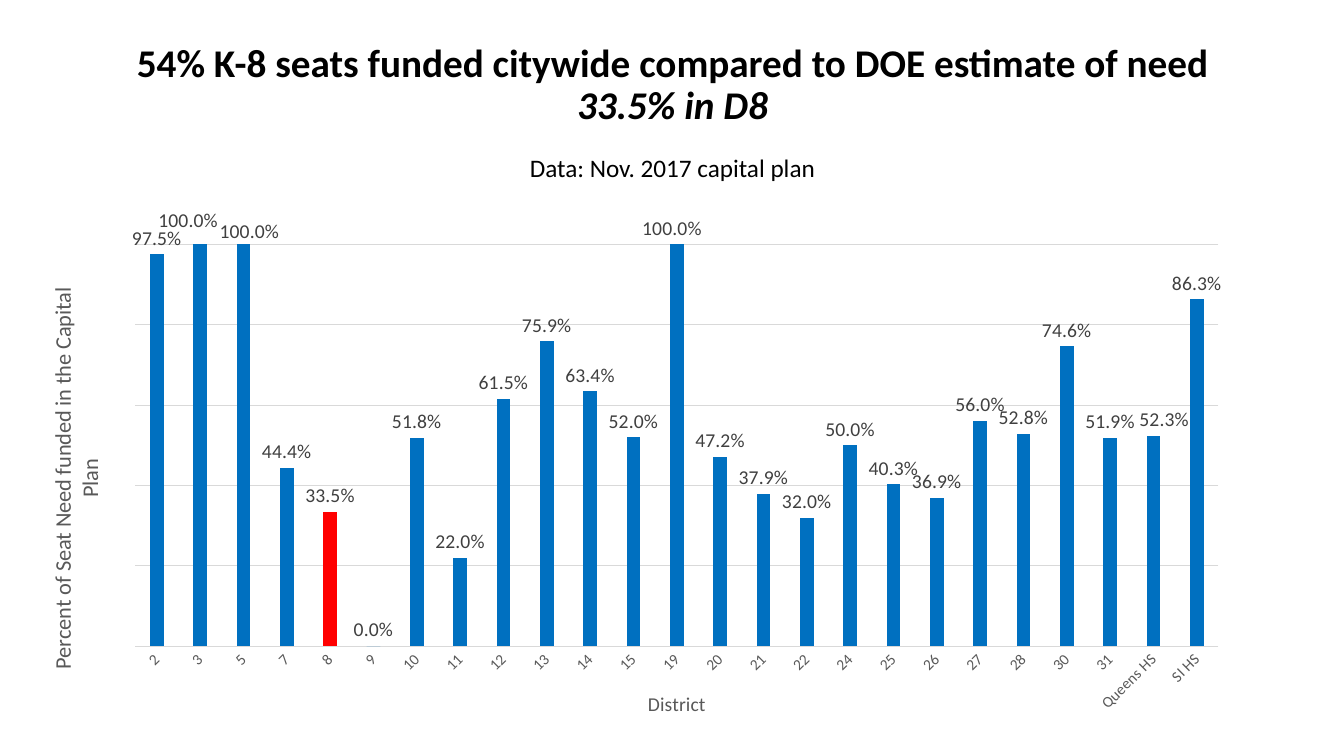
from lxml import etree
from pptx import Presentation
from pptx.chart.data import CategoryChartData
from pptx.dml.color import RGBColor
from pptx.enum.chart import XL_CHART_TYPE, XL_LABEL_POSITION, XL_TICK_MARK
from pptx.enum.text import MSO_ANCHOR, PP_ALIGN
from pptx.oxml.ns import qn
from pptx.util import Inches, Pt

COLUMNS = XL_CHART_TYPE.COLUMN_CLUSTERED
OUTSIDE_END = XL_LABEL_POSITION.OUTSIDE_END
NO_TICK = XL_TICK_MARK.NONE
MIDDLE, CENTER = MSO_ANCHOR.MIDDLE, PP_ALIGN.CENTER

BLACK = RGBColor(0x00, 0x00, 0x00)
WHITE = RGBColor(0xFF, 0xFF, 0xFF)
BLUE = RGBColor(0x00, 0x70, 0xC0)
RED = RGBColor(0xFF, 0x00, 0x00)
GRID_GRAY = RGBColor(0xD9, 0xD9, 0xD9)
AXIS_GRAY = RGBColor(0x59, 0x59, 0x59)
LABEL_GRAY = RGBColor(0x40, 0x40, 0x40)
FONT = "Calibri"
PERCENT = "0.0%"

TITLE_LINES = [
    ("54% K-8 seats funded citywide compared to DOE estimate of need", dict(size=28, bold=True)),
    ("33.5% in D8", dict(size=28, bold=True, italic=True)),
    ("Data: Nov. 2017 capital plan", dict(size=18, before=20)),
]
FUNDED = {
    "2": 0.975, "3": 1, "5": 1, "7": 0.444, "8": 0.335, "9": 0, "10": 0.518,
    "11": 0.22, "12": 0.615, "13": 0.759, "14": 0.634, "15": 0.52, "19": 1,
    "20": 0.472, "21": 0.379, "22": 0.32, "24": 0.5, "25": 0.403, "26": 0.369,
    "27": 0.56, "28": 0.528, "30": 0.746, "31": 0.519, "Queens HS": 0.523,
    "SI HS": 0.863,
}
HIGHLIGHT = "8"
LABEL_SHIFTS = {"3": (-0.01, -0.015), "5": (0.005, 0.006), "19": (-0.004, 0), "Queens HS": (0.009, 0)}
PLOT_AREA = dict(layoutTarget="inner", xMode="edge", yMode="edge", x=0.081, y=0.098, w=0.906, h=0.758)


def style_font(font, size, color, bold=False, italic=False):
    """Apply the slide's typeface with the given format."""
    font.name, font.size = FONT, Pt(size)
    font.bold, font.italic = bold, italic
    font.color.rgb = color


def write_line(para, text, size, color=BLACK, bold=False, italic=False, before=0):
    """Write one centred line into a paragraph."""
    para.alignment = CENTER
    para.line_spacing = 0.9
    para.space_before = Pt(before)
    span = para.add_run()
    span.text = text
    style_font(span.font, size, color, bold, italic)


def make_layout(settings):
    """Return a manual chart layout element."""
    layout = etree.Element(qn("c:layout"))
    manual = etree.SubElement(layout, qn("c:manualLayout"))
    for name, value in settings.items():
        etree.SubElement(manual, qn("c:" + name)).set("val", str(value))
    return layout


def add_title(page):
    """Fill the title placeholder."""
    title = page.shapes.title
    title.left, title.top = Inches(0.92), Inches(0.38)
    title.width, title.height = Inches(11.5), Inches(1.49)
    title.fill.solid()
    title.fill.fore_color.rgb = WHITE
    frame = title.text_frame
    frame.word_wrap = True
    frame.vertical_anchor = MIDDLE
    for index, (text, style) in enumerate(TITLE_LINES):
        para = frame.add_paragraph() if index else frame.paragraphs[0]
        write_line(para, text, **style)


def style_axes(chart):
    """Format both axes and their titles."""
    districts, percents = chart.category_axis, chart.value_axis
    for axis, text, size in (
        (districts, "District", 14),
        (percents, "Percent of Seat Need funded in the Capital Plan", 16),
    ):
        para = axis.axis_title.text_frame.paragraphs[0]
        span = para.add_run()
        span.text = text
        style_font(span.font, size, AXIS_GRAY)
        axis.major_tick_mark = axis.minor_tick_mark = NO_TICK
    percents.axis_title.text_frame._txBody.bodyPr.set("rot", "-5400000")
    percents.minimum_scale, percents.maximum_scale = 0, 1
    percents.major_unit = 0.2
    percents.visible = False
    percents.tick_labels.number_format = PERCENT
    percents.tick_labels.number_format_is_linked = False
    style_font(districts.tick_labels.font, 11, AXIS_GRAY)
    districts._element.find(qn("c:txPr")).find(qn("a:bodyPr")).set("rot", "-2700000")
    for line in (percents.major_gridlines.format.line, districts.format.line):
        line.color.rgb = GRID_GRAY
        line.width = Pt(0.75)


def style_columns(plot):
    """Colour the columns and place their labels."""
    plot.gap_width, plot.overlap = 219, -27
    plot.vary_by_categories = False
    series = plot.series[0]
    series.invert_if_negative = False
    series.format.fill.solid()
    series.format.fill.fore_color.rgb = BLUE
    names = list(FUNDED)
    fill = series.points[names.index(HIGHLIGHT)].format.fill
    fill.solid()
    fill.fore_color.rgb = RED
    labels = series.data_labels
    labels.show_value = True
    labels.position = OUTSIDE_END
    labels.number_format = PERCENT
    labels.number_format_is_linked = False
    style_font(labels.font, 14, LABEL_GRAY)
    for name, (shift_x, shift_y) in LABEL_SHIFTS.items():
        index = names.index(name)
        label = series.points[index].data_label
        label.position = OUTSIDE_END
        style_font(label.font, 14, LABEL_GRAY)
        element = series._element.xpath(f"c:dLbls/c:dLbl[c:idx/@val='{index}']")[0]
        element.insert(1, make_layout(dict(x=shift_x, y=shift_y)))


def add_funding_chart(page):
    """Add the chart of funded seats by district."""
    data = CategoryChartData(number_format=PERCENT)
    data.categories = list(FUNDED)
    data.add_series("Series 1", list(FUNDED.values()))
    frame = page.shapes.add_chart(COLUMNS, Inches(0.38), Inches(1.91), Inches(11.86), Inches(5.26), data)
    chart = frame.chart
    chart.has_legend = chart.has_title = False
    style_font(chart.font, 10, BLACK)
    style_axes(chart)
    style_columns(chart.plots[0])
    area = chart._chartSpace.chart.plotArea
    for old in area.findall(qn("c:layout")):
        area.remove(old)
    area.insert(0, make_layout(PLOT_AREA))


def main():
    """Build and save the slide."""
    deck = Presentation()
    deck.slide_width, deck.slide_height = Inches(13.33), Inches(7.5)
    page = deck.slides.add_slide(deck.slide_layouts[5])
    add_title(page)
    add_funding_chart(page)
    deck.save("out.pptx")


if __name__ == "__main__":
    main()
